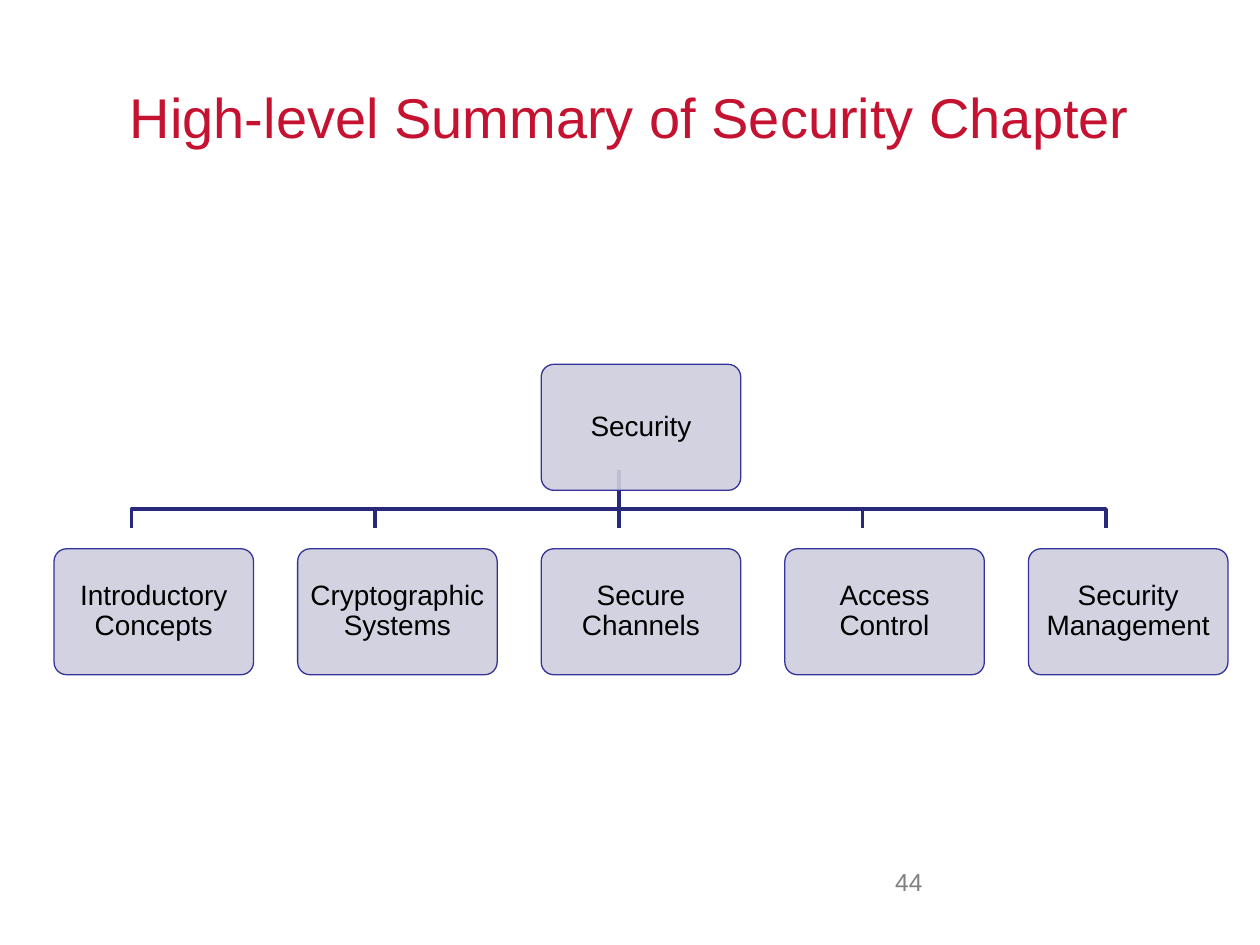
"""Build a slide with a tree of the topics in the security chapter."""
from lxml import etree
from pptx import Presentation
from pptx.dml.color import RGBColor
from pptx.enum.shapes import MSO_CONNECTOR, MSO_SHAPE
from pptx.enum.text import MSO_ANCHOR, PP_ALIGN
from pptx.oxml.ns import qn
from pptx.util import Pt

STRAIGHT = MSO_CONNECTOR.STRAIGHT
ROUNDED = MSO_SHAPE.ROUNDED_RECTANGLE
TOP, MIDDLE = MSO_ANCHOR.TOP, MSO_ANCHOR.MIDDLE
CENTER, RIGHT = PP_ALIGN.CENTER, PP_ALIGN.RIGHT
RED = RGBColor(0xC4, 0x12, 0x30)
NAVY = RGBColor(0x29, 0x29, 0x7B)
BLUE = RGBColor(0x33, 0x33, 0x99)
LAVENDER = RGBColor(0xCE, 0xCE, 0xDE)
BLACK = RGBColor(0, 0, 0)
GRAY = RGBColor(0x80, 0x80, 0x80)

TOPICS = ["Introductory Concepts", "Cryptographic Systems", "Secure Channels",
          "Access Control", "Security Management"]
LEFT, PITCH = 30.9, 139.2
BOX_W, BOX_H = 114, 72
ROOT_COL = 2
ROOT_TOP, TOPIC_TOP = 208.2, 313.6
STEM_DX = 44.3
STEM_TOP, BAR_Y, STEM_END = 268.6, 290.9, 301.7


def write(sp, text, size, color, align, anchor):
    tf = sp.text_frame
    tf.word_wrap = True
    tf.vertical_anchor = anchor
    p = tf.paragraphs[0]
    p.text = text
    p.alignment = align
    r = p.runs[0]
    r.font.name = "Arial"
    r.font.size = Pt(size)
    r.font.color.rgb = color
    return p


prs = Presentation()
prs.slide_width, prs.slide_height = Pt(720), Pt(540)
s = prs.slides.add_slide(prs.slide_layouts[6])

title = s.shapes.add_textbox(Pt(36), Pt(21.6), Pt(648), Pt(90))
write(title, "High-level Summary of Security Chapter", 32, RED, CENTER, MIDDLE)

root_x = LEFT + ROOT_COL * PITCH + STEM_DX
for col in reversed(range(len(TOPICS))):
    x = LEFT + col * PITCH + STEM_DX
    if col == ROOT_COL:
        branch = s.shapes.add_connector(
            STRAIGHT, Pt(root_x), Pt(STEM_TOP), Pt(x), Pt(STEM_END))
        etree.SubElement(branch.line._get_or_add_ln().getparent(), qn("a:effectLst"))
    else:
        fb = s.shapes.build_freeform(Pt(root_x), Pt(STEM_TOP))
        corners = [(root_x, BAR_Y), (x, BAR_Y), (x, STEM_END)]
        fb.add_line_segments([(Pt(a), Pt(b)) for a, b in corners], close=False)
        branch = fb.convert_to_shape()
        branch.shadow.inherit = False
        branch.fill.background()
    branch.line.color.rgb = NAVY
    branch.line.width = Pt(2)

boxes = [("Security", ROOT_COL, ROOT_TOP)]
boxes += [(topic, col, TOPIC_TOP) for col, topic in enumerate(TOPICS)]
for text, col, top in boxes:
    sp = s.shapes.add_shape(
        ROUNDED, Pt(LEFT + col * PITCH), Pt(top), Pt(BOX_W), Pt(BOX_H))
    sp.adjustments[0] = 0.1
    sp.shadow.inherit = False
    sp.fill.solid()
    sp.fill.fore_color.rgb = LAVENDER
    color = sp.fill._xPr.find(qn("a:solidFill"))[0]
    etree.SubElement(color, qn("a:alpha"), val="90000")
    sp.line.color.rgb = BLUE
    sp.line.width = Pt(0.75)
    tf = sp.text_frame
    tf.margin_left = tf.margin_right = tf.margin_top = tf.margin_bottom = Pt(5)
    p = write(sp, text, 16, BLACK, CENTER, MIDDLE)
    p.line_spacing = 0.9

number = s.shapes.add_textbox(Pt(468), Pt(491.8), Pt(66.2), Pt(37.4))
write(number, "44", 14, GRAY, RIGHT, TOP)

prs.save("out.pptx")
